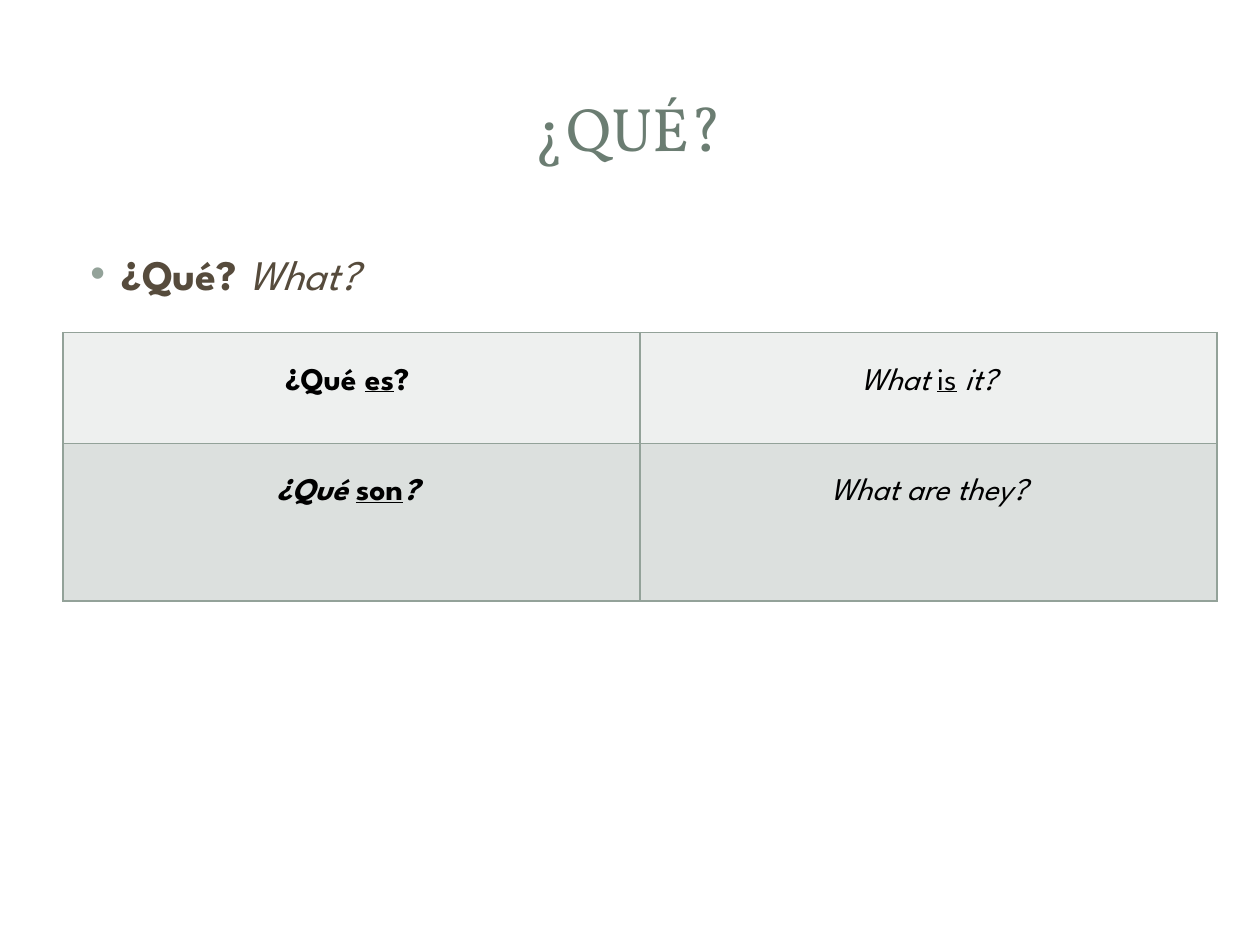
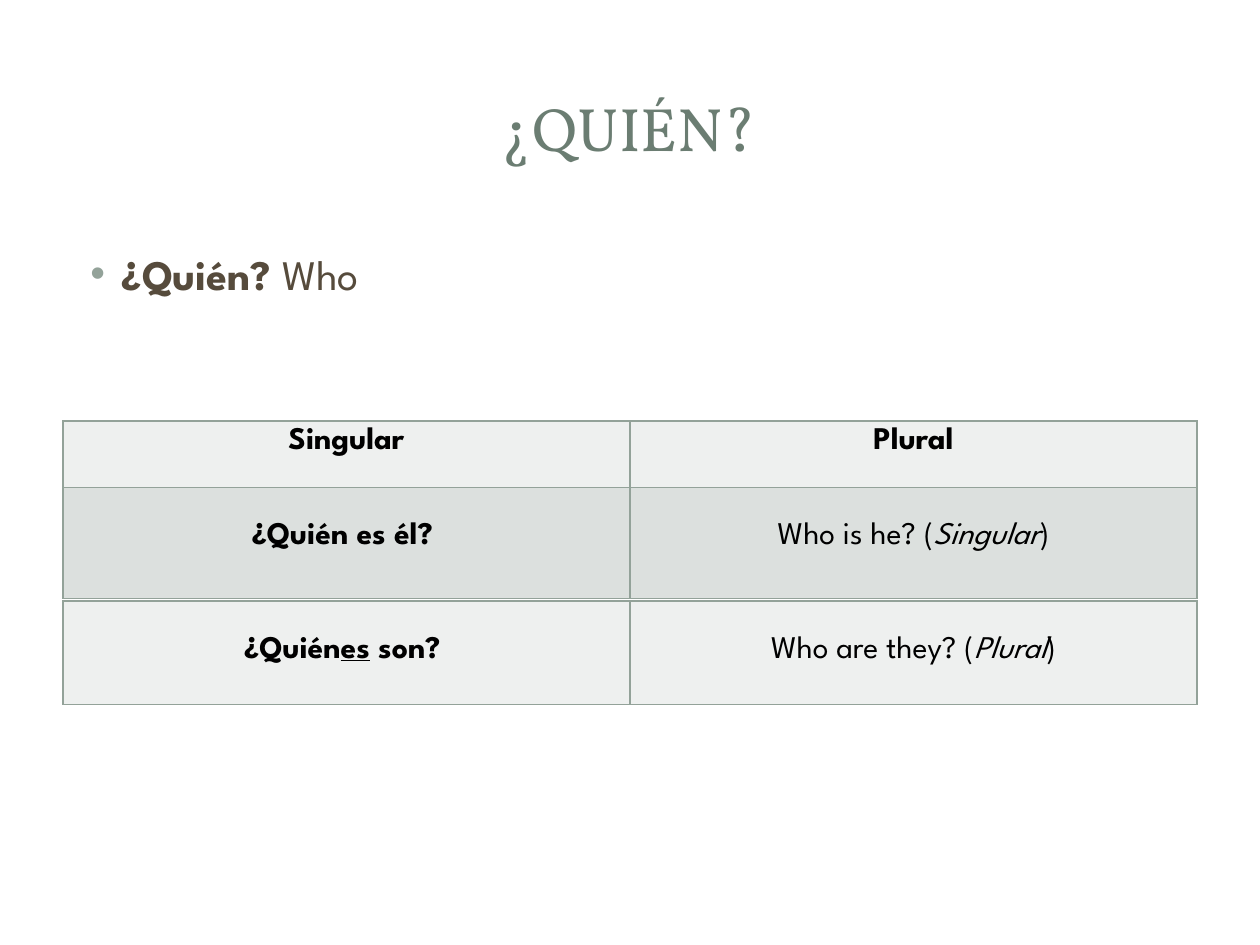
from dataclasses import dataclass

from lxml import etree
from pptx import Presentation
from pptx import util as u
from pptx.dml.color import RGBColor
from pptx.enum import shapes, text
from pptx.oxml import ns


@dataclass(frozen=True)
class Theme:
    heading_font: str = "Vollkorn"
    body_font: str = "League Spartan"
    panel: str = "FFFFFF"
    heading: str = "6B7D72"
    body: str = "564B3C"
    accent: str = "93A299"
    cell_text: str = "000000"
    bands: tuple = ("EEF0EF", "DCE0DE")
    heading_size: int = 35
    body_size: int = 24
    cell_size: int = 18
    border_width: int = 1
    left: float = 0.5
    tight_margin: float = 0.05
    lowered_margin: float = 0.28


THEME = Theme()


def add_spans(para, spans, font, size, colour):
    for wording, style in spans:
        span = para.add_run()
        span.text = wording
        span.font.name = font
        span.font.size = u.Pt(size)
        span.font.color.rgb = RGBColor.from_string(colour)
        span.font.bold = "b" in style
        span.font.italic = "i" in style
        span.font.underline = "u" in style


def add_solid_fill(parent, colour):
    fill = etree.SubElement(parent, ns.qn("a:solidFill"))
    return etree.SubElement(fill, ns.qn("a:srgbClr"), val=colour)


def add_panel(page, kind, left, top, width, height):
    panel = page.shapes.add_shape(kind, u.Inches(left), u.Inches(top),
                                  u.Inches(width), u.Inches(height))
    panel.shadow.inherit = False
    panel.fill.solid()
    panel.fill.fore_color.rgb = RGBColor.from_string(THEME.panel)
    panel.line.fill.background()
    return panel


def add_frame(page):
    kinds = shapes.MSO_SHAPE
    sheet = add_panel(page, kinds.ROUNDED_RECTANGLE, 0.1, 0.11, 9.8, 7.29)
    sheet.adjustments[0] = 0.02
    band = add_panel(page, kinds.RECTANGLE, 0.3, 0.3, 9.4, 1.45)
    colour = band.fill._xPr.find(".//" + ns.qn("a:srgbClr"))
    etree.SubElement(colour, ns.qn("a:alpha"), val="83000")
    add_panel(page, kinds.RECTANGLE, 0.41, 0.41, 9.17, 1.22)


def add_page(deck, heading):
    page = deck.slides.add_slide(deck.slide_layouts[5])
    add_frame(page)
    title = page.shapes.title
    page.shapes._spTree.append(title._element)
    title.left, title.top = u.Inches(0.47), u.Inches(0.44)
    title.width, title.height = u.Inches(9.03), u.Inches(1.14)
    frame = title.text_frame
    frame.vertical_anchor = text.MSO_ANCHOR.MIDDLE
    para = frame.paragraphs[0]
    para.alignment = text.PP_ALIGN.CENTER
    add_spans(para, [(heading, "")], THEME.heading_font,
              THEME.heading_size, THEME.heading)
    return page


def add_bullet(page, spans):
    box = page.shapes.add_textbox(u.Inches(THEME.left), u.Inches(1.92),
                                  u.Inches(9), u.Inches(4.78))
    frame = box.text_frame
    frame.word_wrap = True
    para = frame.paragraphs[0]
    para.space_before = u.Pt(0.2 * THEME.body_size)
    add_spans(para, spans, THEME.body_font, THEME.body_size, THEME.body)
    props = para._p.get_or_add_pPr()
    props.set("marL", str(u.Inches(0.37)))
    props.set("indent", str(u.Inches(-0.25)))
    colour = etree.SubElement(props, ns.qn("a:buClr"))
    etree.SubElement(colour, ns.qn("a:srgbClr"), val=THEME.accent)
    etree.SubElement(props, ns.qn("a:buFont"), typeface="Arial")
    etree.SubElement(props, ns.qn("a:buChar"), char="•")


def add_borders(cell):
    props = cell._tc.get_or_add_tcPr()
    for index, side in enumerate(("lnL", "lnR", "lnT", "lnB")):
        line = etree.Element(ns.qn(f"a:{side}"),
                             w=str(u.Pt(THEME.border_width)))
        add_solid_fill(line, THEME.accent)
        props.insert(index, line)


def format_cell(cell, spans, band, margin):
    cell.fill.solid()
    cell.fill.fore_color.rgb = RGBColor.from_string(band)
    cell.margin_top = u.Inches(margin)
    para = cell.text_frame.paragraphs[0]
    para.alignment = text.PP_ALIGN.CENTER
    add_spans(para, spans, THEME.body_font, THEME.cell_size, THEME.cell_text)
    add_borders(cell)


def add_phrase_table(page, top, width, heights, rows, has_header=False):
    columns = len(rows[0])
    table = page.shapes.add_table(
        len(rows), columns, u.Inches(THEME.left), u.Inches(top),
        u.Inches(width), u.Inches(sum(heights))).table
    table.first_row = has_header
    table.horz_banding = False
    for column in table.columns:
        column.width = u.Inches(width / columns)
    for r, (height, phrases) in enumerate(zip(heights, rows)):
        table.rows[r].height = u.Inches(height)
        is_header = has_header and r == 0
        margin = THEME.tight_margin if is_header else THEME.lowered_margin
        for c, spans in enumerate(phrases):
            format_cell(table.cell(r, c), spans, THEME.bands[r % 2], margin)


def build_what(deck):
    page = add_page(deck, "¿QUÉ?")
    add_bullet(page, [("¿Qué? ", "b"), ("What?", "i")])
    add_phrase_table(page, 2.64, 9.16, [0.88, 1.25], [
        [[("¿Qué ", "b"), ("es", "bu"), ("? ", "b")],
         [("What ", "i"), ("is", "u"), (" it?", "i")]],
        [[("¿Qué ", "bi"), ("son", "bu"), ("? ", "bi")],
         [("What are they?", "i")]],
    ])


def build_who(deck):
    page = add_page(deck, "¿QUIÉN?")
    add_bullet(page, [("¿Quién? ", "b"), ("Who", "")])
    add_phrase_table(page, 3.34, 9, [0.53, 0.88], [
        [[("Singular", "b")], [("Plural", "b")]],
        [[("¿Quién es él? ", "b")],
         [("Who is he? (", ""), ("Singular", "i"), (")", "")]],
    ], has_header=True)
    add_phrase_table(page, 4.77, 9, [0.82], [
        [[("¿Quién", "b"), ("es", "bu"), (" son? ", "b")],
         [("Who are they? (", ""), ("Plural", "i"), (")", "")]],
    ])


def main():
    deck = Presentation()
    deck.slide_width, deck.slide_height = u.Inches(10), u.Inches(7.5)
    build_what(deck)
    build_who(deck)
    deck.save("out.pptx")


if __name__ == "__main__":
    main()
